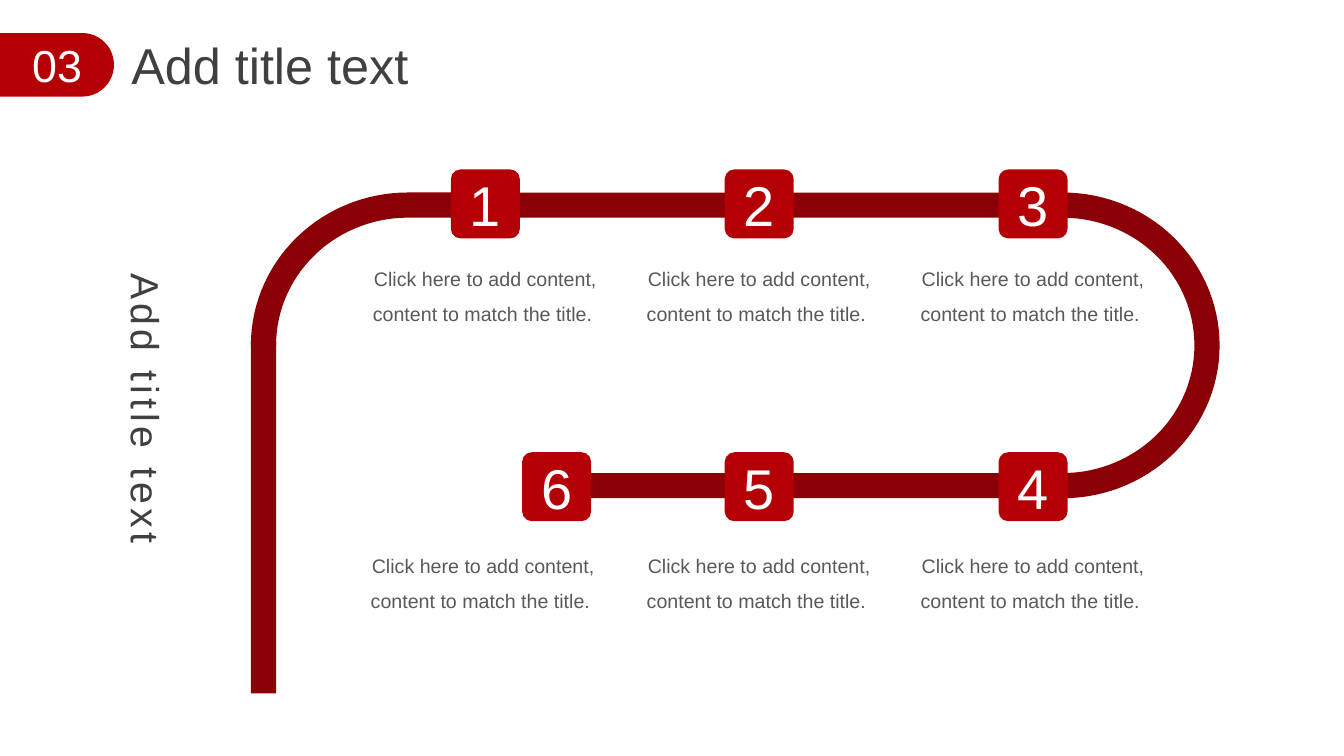
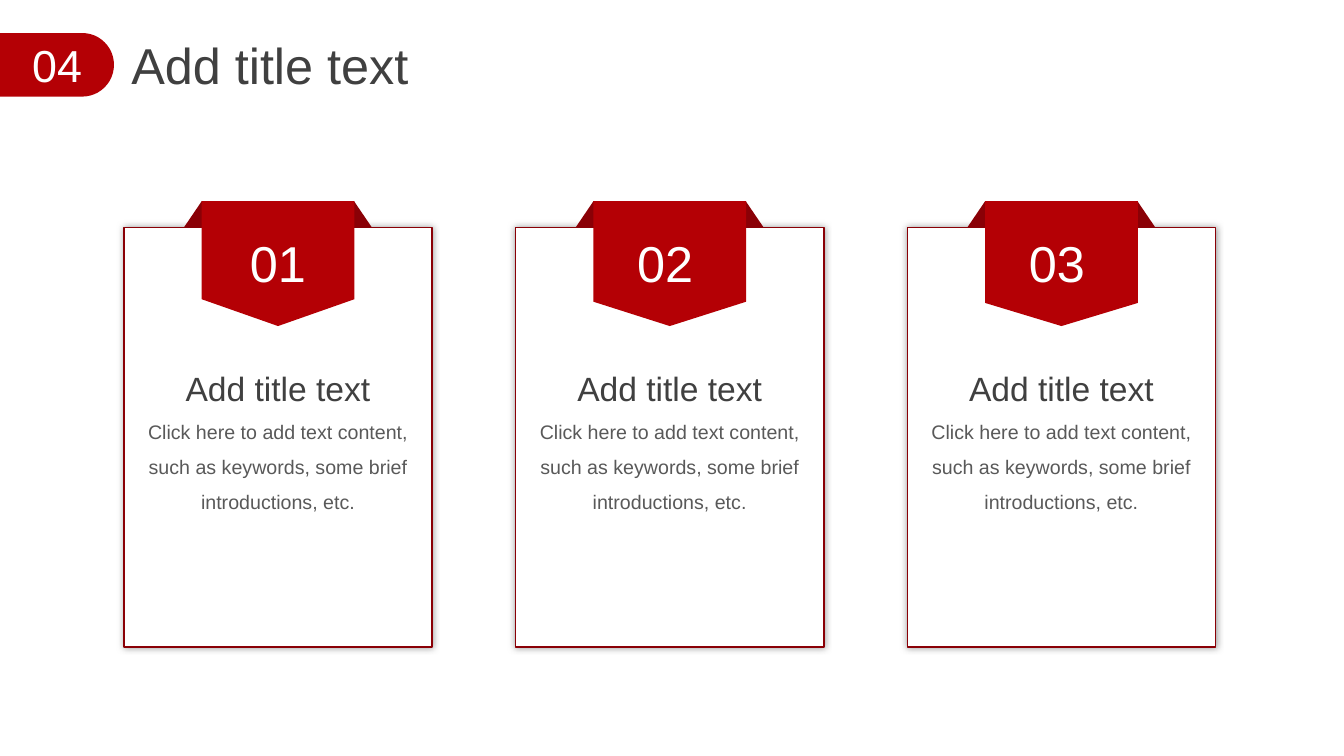
import math

from lxml import etree
from pptx import Presentation
from pptx import util as u
from pptx.dml.color import RGBColor
from pptx.enum import shapes, text
from pptx.oxml import ns

RED = RGBColor(0xB4, 0x00, 0x05)
DARK_RED = RGBColor(0x8A, 0x00, 0x06)
WHITE = RGBColor(0xFF, 0xFF, 0xFF)
TITLE_GREY = RGBColor(0x40, 0x40, 0x40)
BODY_GREY = RGBColor(0x59, 0x59, 0x59)
FONT = "Arial"
SHAPE = shapes.MSO_SHAPE
ALIGN = text.PP_ALIGN
ANCHOR = text.MSO_ANCHOR


def add_block(slide, kind, left, top, width, height, fill, adjustments=()):
    """Add a preset shape with a plain fill, no line and no shadow."""
    shape = slide.shapes.add_shape(
        kind, u.Pt(left), u.Pt(top), u.Pt(width), u.Pt(height))
    shape.shadow.inherit = False
    shape.fill.solid()
    shape.fill.fore_color.rgb = fill
    shape.line.fill.background()
    for index, value in enumerate(adjustments):
        shape.adjustments[index] = value
    return shape


def write(shape, words, size, color, align=ALIGN.CENTER, anchor=ANCHOR.TOP, spacing=1.0):
    """Put one formatted paragraph into a shape, without insets."""
    frame = shape.text_frame
    frame_format = {
        "word_wrap": True, "auto_size": text.MSO_AUTO_SIZE.NONE, "vertical_anchor": anchor,
        "margin_left": 0, "margin_right": 0, "margin_top": 0, "margin_bottom": 0,
    }
    for name, value in frame_format.items():
        setattr(frame, name, value)
    paragraph = frame.paragraphs[0]
    paragraph.alignment = align
    paragraph.line_spacing = spacing
    run = paragraph.add_run()
    run.text = words
    for name, value in {"name": FONT, "size": u.Pt(size), "bold": False}.items():
        setattr(run.font, name, value)
    run.font.color.rgb = color
    return run


presentation = Presentation()
presentation.slide_width, presentation.slide_height = u.Pt(960), u.Pt(540)

# Shared header: section badge and title
slides = []
for section in ("03", "04"):
    slide = presentation.slides.add_slide(presentation.slide_layouts[5])
    slides.append(slide)
    badge = add_block(slide, SHAPE.ROUND_2_SAME_RECTANGLE, 18, 5.6, 45.4, 81.4, RED, (0.5, 0))
    badge.rotation = 90
    number = slide.shapes.add_textbox(u.Pt(17), u.Pt(27), u.Pt(47.5), u.Pt(38.9))
    write(number, section, 32, WHITE)
    title = slide.shapes.title
    title_place = {"left": 93.8, "top": 24.5, "width": 252, "height": 44}
    for name, value in title_place.items():
        setattr(title, name, u.Pt(value))
    write(title, "Add title text", 36, TITLE_GREY, ALIGN.JUSTIFY)

roadmap, cards = slides

# Roadmap: bends, outer edge out and inner edge back
BAND = 18
BAND_LEFT = 179.2
BEND_Y, RADIUS_X, RADIUS_Y = 246.7, 112.2, 109.2
TOP_BAND = BEND_Y - RADIUS_Y
BOTTOM_BAND = BEND_Y + RADIUS_Y - BAND

bends = ((BAND_LEFT + RADIUS_X, 180, 270, (), (346.3,)),
         (759, 270, 450, (736,), (736,)))
for center_x, first, last, lead_in, lead_out in bends:
    edges = []
    for inset in (0, BAND):
        arc = []
        for degrees in range(first, last + 1, 3):
            angle = math.radians(degrees)
            arc.append((center_x + (RADIUS_X - inset) * math.cos(angle),
                        BEND_Y + (RADIUS_Y - inset) * math.sin(angle)))
        edges.append([(x, arc[0][1]) for x in lead_in] + arc
                     + [(x, arc[-1][1]) for x in lead_out])
    outline = [(u.Pt(x), u.Pt(y)) for x, y in edges[0] + edges[1][::-1]]
    builder = roadmap.shapes.build_freeform(*outline[0])
    builder.add_line_segments(outline[1:], close=True)
    bend = builder.convert_to_shape()
    bend.shadow.inherit = False
    bend.fill.solid()
    bend.fill.fore_color.rgb = DARK_RED
    bend.line.fill.background()

# Roadmap: straight parts of the band
for left, top, width, height in (
        (396, BOTTOM_BAND, 144, BAND), (540, BOTTOM_BAND, 196.6, BAND),
        (345.6, TOP_BAND, 194.4, BAND), (540, TOP_BAND, 196.6, BAND),
        (BAND_LEFT, 243.4, BAND, 251.8)):
    add_block(roadmap, SHAPE.RECTANGLE, left, top, width, height, DARK_RED)

# Roadmap: numbered tiles with captions
TILE, CAPTION_WIDTH = 49.3, 162
COLUMNS = [346.7 + 195.6 * column for column in range(3)]
ROWS = ((121, 182.2), (323, 387.4))
steps = [(center, center, ROWS[0]) for center in COLUMNS]
steps += [(center, center, ROWS[1]) for center in COLUMNS[:0:-1]]
steps.append((397.6, 345.2, ROWS[1]))
for step, (tile_x, caption_x, (tile_top, caption_top)) in enumerate(steps, 1):
    tile = add_block(roadmap, SHAPE.ROUNDED_RECTANGLE, tile_x - TILE / 2, tile_top,
                     TILE, TILE, RED, (0.14,))
    write(tile, str(step), 40, WHITE, anchor=ANCHOR.MIDDLE)
    caption = roadmap.shapes.add_textbox(
        u.Pt(caption_x - CAPTION_WIDTH / 2), u.Pt(caption_top), u.Pt(CAPTION_WIDTH), u.Pt(47.5))
    write(caption, "Click here to add content, content to match the title. ",
          14, BODY_GREY, spacing=1.5)

# Roadmap: vertical heading
heading = roadmap.shapes.add_textbox(u.Pt(87.8), u.Pt(195.1), u.Pt(33.8), u.Pt(237.6))
heading_run = write(heading, "Add title text", 28, TITLE_GREY)
heading_run.font._element.set("spc", "300")
heading.text_frame._txBody.bodyPr.set("vert", "eaVert")

# Cards: frame with soft shadow, ribbon, number and text
CARD_WIDTH = 220.2
card_values = (("01", 0.215, 0), ("02", 0.195, -3.2), ("03", 0.185, -3.2))
for index, (label, point, shift) in enumerate(card_values):
    left = 88.5 + 279.8 * index
    center = left + CARD_WIDTH / 2
    card = add_block(cards, SHAPE.RECTANGLE, left, 162.3, CARD_WIDTH, 300, WHITE)
    card.line.color.rgb = DARK_RED
    card.line.width = u.Pt(1)
    effects = card._element.spPr.find(ns.qn("a:effectLst"))
    shadow = etree.SubElement(effects, ns.qn("a:outerShdw"), blurRad=str(u.Pt(5)),
                              dist="0", dir="0", algn="ctr", rotWithShape="0")
    shadow_color = etree.SubElement(shadow, ns.qn("a:srgbClr"), val=str(BODY_GREY))
    etree.SubElement(shadow_color, ns.qn("a:alpha"), val="60000")

    add_block(cards, SHAPE.TRAPEZOID, center - 67.1, 143.7, 134, 18.6, DARK_RED, (0.679,))
    ribbon = add_block(cards, SHAPE.PENTAGON, center - 44.6, 133.7, 89.2, 109.2, RED, (point,))
    ribbon.rotation = 90

    for words, size, color, middle, top, width, height, spacing in (
            (label, 36, WHITE, center + shift, 165.6, 64.8, 44, 1.0),
            ("Add title text", 24, TITLE_GREY, center, 262.7, 155.5, 29, 1.0),
            ("Click here to add text content, such as keywords, some brief introductions, etc.",
             14, BODY_GREY, center, 291.4, 193.7, 73.4, 1.5)):
        box = cards.shapes.add_textbox(
            u.Pt(middle - width / 2), u.Pt(top), u.Pt(width), u.Pt(height))
        write(box, words, size, color, spacing=spacing)

presentation.save("out.pptx")
